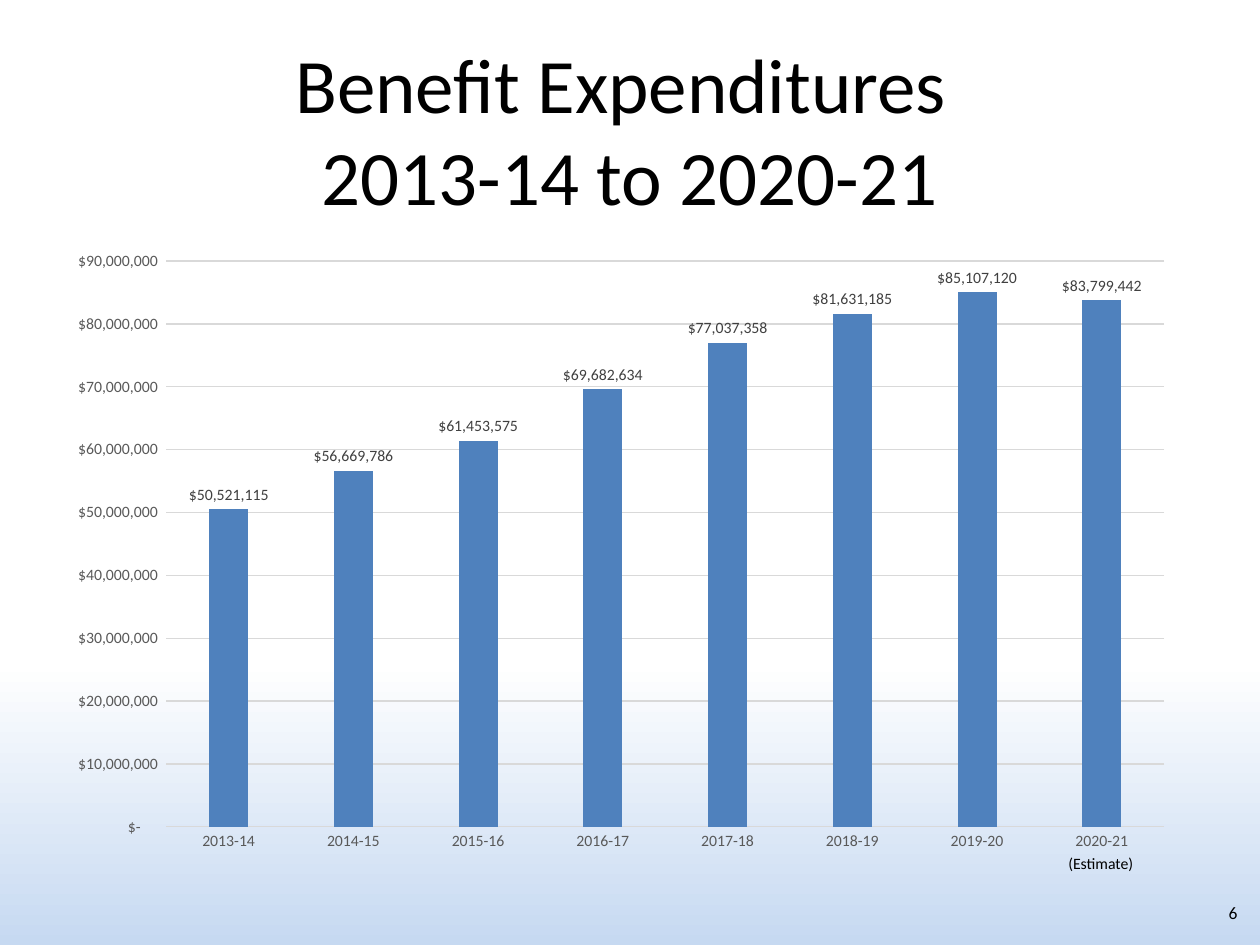
from dataclasses import dataclass

from lxml import etree
from pptx import Presentation
from pptx.chart.data import CategoryChartData
from pptx.dml.color import RGBColor
from pptx.enum.chart import XL_CHART_TYPE, XL_LABEL_POSITION, XL_TICK_MARK
from pptx.enum.text import PP_ALIGN
from pptx.oxml.ns import qn
from pptx.util import Inches, Pt

CLUSTERED = XL_CHART_TYPE.COLUMN_CLUSTERED
OUTSIDE_END = XL_LABEL_POSITION.OUTSIDE_END
NO_TICK = XL_TICK_MARK.NONE
LEFT, CENTER, RIGHT = PP_ALIGN.LEFT, PP_ALIGN.CENTER, PP_ALIGN.RIGHT

FONT = "Calibri"
BLACK, GRAY, LABEL_GRAY = "000000", "595959", "404040"
GRID, BAR = "D9D9D9", "4F81BD"
DOLLARS = r'_("$"* #,##0_);_("$"* \(#,##0\);_("$"* "-"??_);_(@_)'

EXPENDITURES = {
    "2013-14": 50521115,
    "2014-15": 56669786,
    "2015-16": 61453575,
    "2016-17": 69682634,
    "2017-18": 77037358,
    "2018-19": 81631185,
    "2019-20": 85107120,
    "2020-21": 83799442,
}


@dataclass
class Label:
    text: str
    left: float
    top: float
    width: float
    height: float
    size: float
    align: PP_ALIGN
    inset_top: float = 0.05


LABELS = [
    Label("Benefit Expenditures \v2013-14 to 2020-21", 0.5, 0.22, 9, 0.83, 44, CENTER, 0.07),
    Label("6", 9.5, 7.11, 0.42, 0.4, 10, RIGHT),
    Label("(Estimate)", 8.38, 6.73, 0.79, 0.25, 9, LEFT),
]


def color(value: str) -> RGBColor:
    return RGBColor.from_string(value)


def style_font(font, size: float, value: str) -> None:
    font.name = FONT
    font.size = Pt(size)
    font.color.rgb = color(value)


def style_line(line) -> None:
    line.color.rgb = color(GRID)
    line.width = Pt(0.75)


def paint_background(slide) -> None:
    fill = slide.background.fill
    fill.gradient()
    fill.gradient_angle = 270
    for stop, (position, value) in zip(fill.gradient_stops, [(0.7, "FFFFFF"), (1, "C6D9F1")]):
        stop.position = position
        stop.color.rgb = color(value)


def add_label(slide, label: Label) -> None:
    shape = slide.shapes.add_textbox(
        Inches(label.left), Inches(label.top), Inches(label.width), Inches(label.height))
    frame = shape.text_frame
    frame.word_wrap = True
    frame.margin_top = Inches(label.inset_top)
    paragraph = frame.paragraphs[0]
    paragraph.text = label.text
    paragraph.alignment = label.align
    style_font(paragraph.font, label.size, BLACK)


def place_plot(chart, **fractions: float) -> None:
    """Fix the inner plot area as fractions of the chart frame."""
    plot_area = chart._chartSpace.chart.plotArea
    for old in plot_area.findall(qn("c:layout")):
        plot_area.remove(old)
    layout = etree.Element(qn("c:layout"))
    plot_area.insert(0, layout)
    manual = etree.SubElement(layout, qn("c:manualLayout"))
    settings = {"layoutTarget": "inner", "xMode": "edge", "yMode": "edge", **fractions}
    for tag, value in settings.items():
        etree.SubElement(manual, qn(f"c:{tag}")).set("val", str(value))


def add_expenditure_chart(slide) -> None:
    data = CategoryChartData(number_format=DOLLARS)
    data.categories = list(EXPENDITURES)
    data.add_series("Series 1", list(EXPENDITURES.values()))
    chart = slide.shapes.add_chart(
        CLUSTERED, Inches(0.42), Inches(1.9), Inches(9), Inches(4.95), data).chart
    chart.has_legend = False
    chart.has_title = False
    style_font(chart.font, 10, BLACK)
    place_plot(chart, x=0.1, y=0.035, w=0.88, h=0.907)

    # Axes
    for axis in (chart.category_axis, chart.value_axis):
        axis.major_tick_mark = axis.minor_tick_mark = NO_TICK
        style_font(axis.tick_labels.font, 9, GRAY)
    style_line(chart.category_axis.format.line)
    value_axis = chart.value_axis
    value_axis.minimum_scale = 0
    value_axis.maximum_scale = 90_000_000
    value_axis.major_unit = 10_000_000
    value_axis.format.line.fill.background()
    style_line(value_axis.major_gridlines.format.line)
    value_axis.tick_labels.number_format = DOLLARS
    value_axis.tick_labels.number_format_is_linked = False

    # Columns and their values
    plot = chart.plots[0]
    plot.gap_width = 219
    plot.overlap = -27
    plot.vary_by_categories = False
    fill = plot.series[0].format.fill
    fill.solid()
    fill.fore_color.rgb = color(BAR)
    plot.has_data_labels = True
    labels = plot.data_labels
    labels.show_value = True
    labels.position = OUTSIDE_END
    labels.number_format = DOLLARS
    labels.number_format_is_linked = False
    style_font(labels.font, 9, LABEL_GRAY)


def main() -> None:
    presentation = Presentation()
    presentation.slide_width = Inches(10)
    presentation.slide_height = Inches(7.5)
    slide = presentation.slides.add_slide(presentation.slide_layouts[6])
    paint_background(slide)
    add_expenditure_chart(slide)
    for label in LABELS:
        add_label(slide, label)
    presentation.save("out.pptx")


if __name__ == "__main__":
    main()
